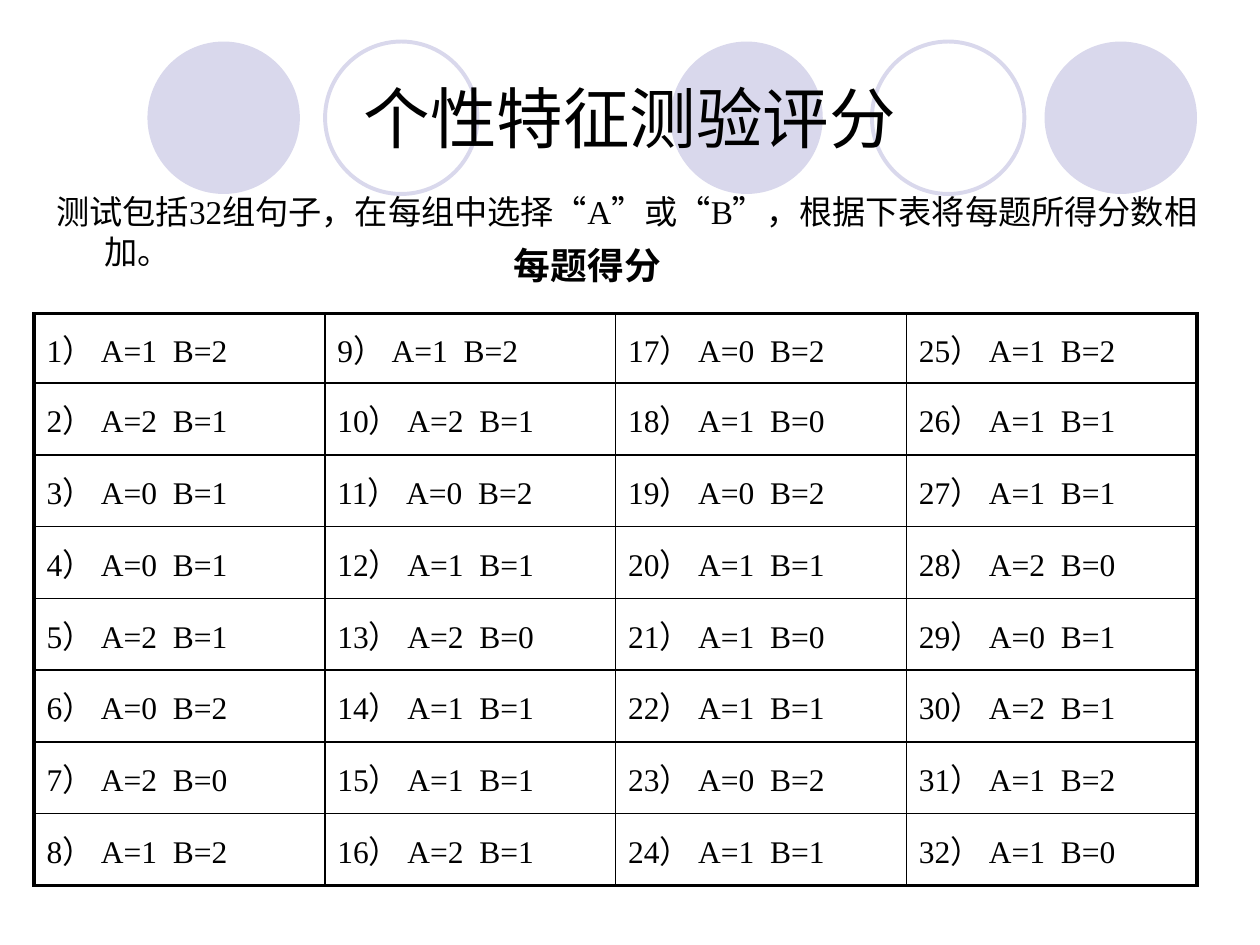
from lxml import etree
from pptx import Presentation
from pptx.dml.color import RGBColor
from pptx.enum.shapes import MSO_SHAPE as Shape
from pptx.enum.text import MSO_ANCHOR as Anchor, PP_ALIGN as Align
from pptx.oxml.ns import qn
from pptx.util import Inches, Pt

FONT, BLACK, LILAC = "Times New Roman", "000000", "D9D8EC"
ROWS, COLS = 8, 4
SCORES = (
    "12 21 01 01 21 02 20 12",
    "12 21 02 11 20 11 11 21",
    "02 10 02 11 10 11 02 11",
    "12 11 11 20 01 21 12 10",
)
CIRCLES = ((5.32, True), (8.29, True), (1.17, True), (6.92, False), (2.58, False))


def rgb(color):
    """Turn a hex string into a colour."""
    return RGBColor.from_string(color)


def write(tf, text, size, bold=False, align=Align.LEFT, anchor=Anchor.TOP, before=0):
    """Put one formatted paragraph in a text frame and return it."""
    tf.word_wrap = True
    tf.vertical_anchor = anchor
    p = tf.paragraphs[0]
    p.alignment = align
    p.space_before = Pt(size * before)
    r = p.add_run()
    r.text = text
    r.font.name, r.font.size, r.font.bold = FONT, Pt(size), bold
    r.font.color.rgb = rgb(BLACK)
    return p


def add_circle(s, left, filled):
    """Add a filled or outlined decorative circle."""
    sp = s.shapes.add_shape(Shape.OVAL, *map(Inches, (left, 0.33, 1.21, 1.21)))
    sp.shadow.inherit = False
    if filled:
        sp.fill.solid()
        sp.fill.fore_color.rgb = rgb(LILAC)
        sp.line.fill.background()
    else:
        sp.fill.background()
        sp.line.color.rgb = rgb(LILAC)
        sp.line.width = Pt(2.25)


def add_title(s, text):
    """Place the title in front of the circles."""
    title = s.shapes.title
    s.shapes.element.append(title.element)
    title.left, title.top, title.width, title.height = map(Inches, (0.5, 0.3, 9, 1.25))
    write(title.text_frame, text, 38, align=Align.CENTER, anchor=Anchor.MIDDLE)


def add_text(s, box, text, size, hanging=0, **fmt):
    """Add a text box with an optional hanging indent."""
    tf = s.shapes.add_textbox(*map(Inches, box)).text_frame
    p_pr = write(tf, text, size, **fmt)._p.get_or_add_pPr()
    p_pr.set("marL", str(Inches(hanging)))
    p_pr.set("indent", str(-Inches(hanging)))


def set_borders(cell, widths):
    """Draw the left, right, top and bottom borders of a cell."""
    tc_pr = cell._tc.get_or_add_tcPr()
    for i, (side, width) in enumerate(zip("LRTB", widths)):
        ln = etree.Element(qn(f"a:ln{side}"), w=str(Pt(width)))
        fill = etree.SubElement(ln, qn("a:solidFill"))
        etree.SubElement(fill, qn("a:srgbClr"), val=BLACK)
        tc_pr.insert(i, ln)


def add_scores(s):
    """Add the score table, numbered down each column."""
    frame = s.shapes.add_table(ROWS, COLS, *map(Inches, (0.27, 2.49, 9.23, 4.55)))
    table = frame.table
    table.first_row = table.horz_banding = False
    for i, row in enumerate(table.rows):
        row.height = Inches(0.57 if i else 0.55)
    for c, column in enumerate(SCORES):
        for r, (a, b) in enumerate(column.split()):
            cell = table.cell(r, c)
            cell.fill.background()
            text = f"{c * ROWS + r + 1}） A={a}  B={b}"
            write(cell.text_frame, text, 18, before=0.2)
            cell.vertical_anchor = Anchor.MIDDLE
            edges = (c == 0, c == COLS - 1, r == 0, r == ROWS - 1)
            set_borders(cell, [2.25 if edge else 1 for edge in edges])


def main():
    """Build and save the slide."""
    prs = Presentation()
    prs.slide_width, prs.slide_height = Inches(10), Inches(7.5)
    s = prs.slides.add_slide(prs.slide_layouts[5])
    for left, filled in CIRCLES:
        add_circle(s, left, filled)
    add_title(s, "个性特征测验评分")
    intro = "测试包括32组句子，在每组中选择“A”或“B”，根据下表将每题所得分数相加。"
    add_text(s, (0.35, 1.47, 9.3, 0.82), intro, 19, hanging=0.38, before=0.2)
    add_text(s, (3.98, 1.88, 1.65, 0.45), "每题得分", 21, bold=True, before=0.5)
    add_scores(s)
    prs.save("out.pptx")


if __name__ == "__main__":
    main()
